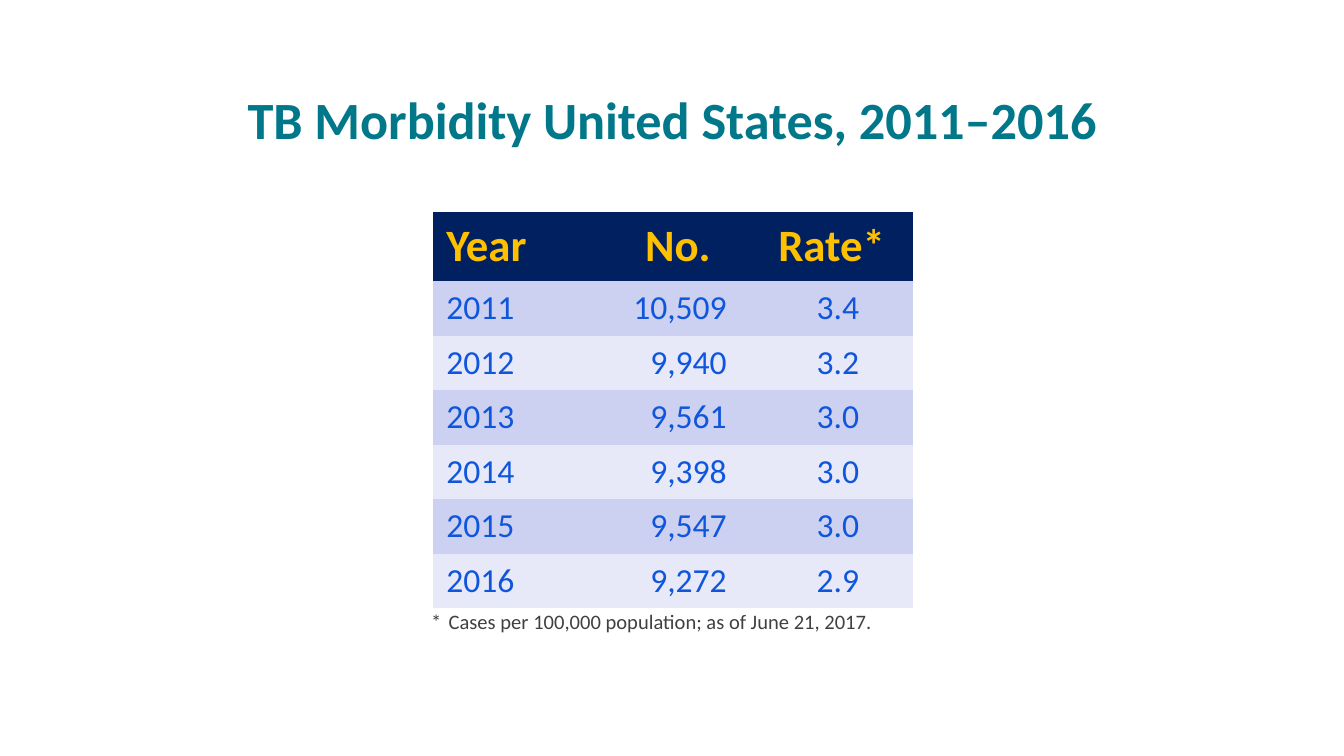
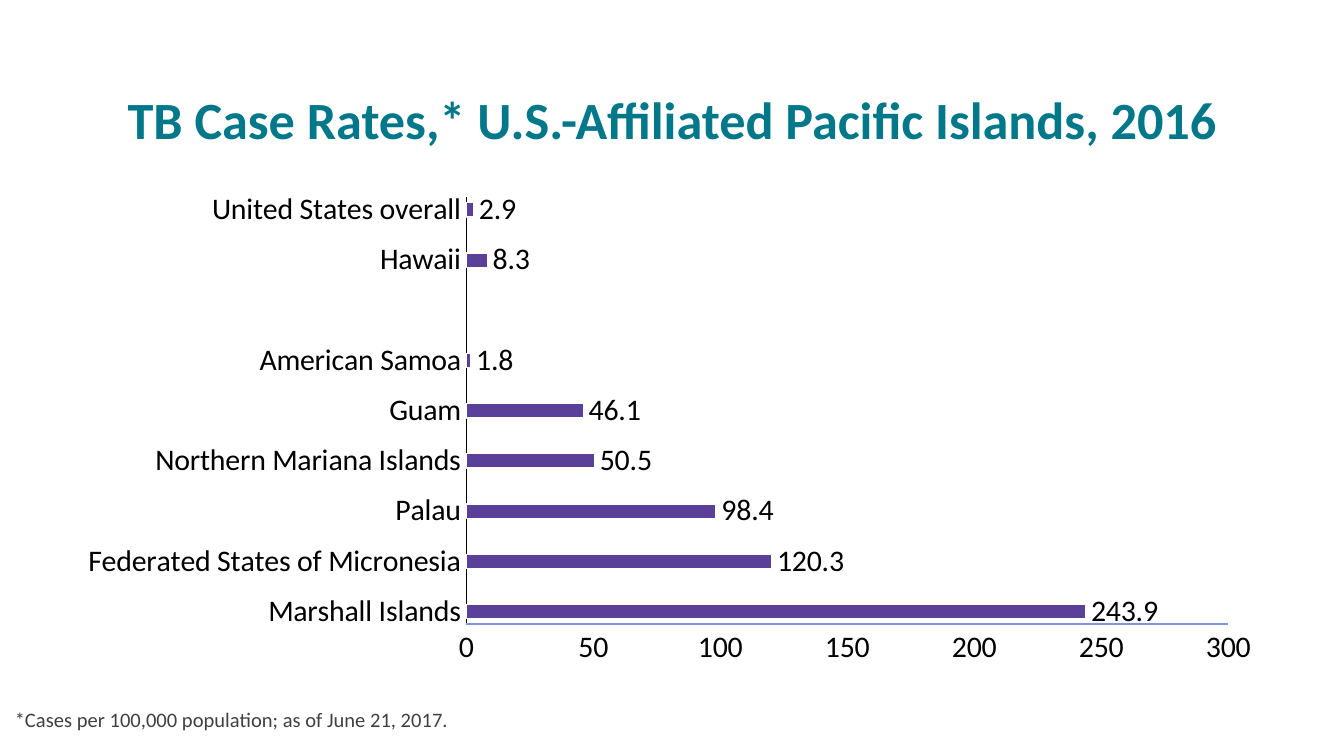
from collections import namedtuple
from dataclasses import dataclass

from lxml import etree
from pptx import Presentation
from pptx import util as u
from pptx.chart.data import CategoryChartData
from pptx.dml.color import RGBColor
from pptx.enum import chart as ch
from pptx.enum import text as t
from pptx.oxml.ns import qn

Box = namedtuple("Box", "left top width height")
Align = t.PP_ALIGN


@dataclass(frozen=True)
class Theme:
    font: str = "Calibri"
    title: str = "00788A"
    note: str = "404040"
    header_fill: str = "002060"
    header_text: str = "FFC000"
    bands: tuple = ("CCD1F2", "E7E9F9")
    figures: str = "0F56DC"
    bar: str = "5A4099"
    bar_edge: str = "FFFFFF"
    axis: str = "000000"
    baseline: str = "8094E0"
    title_size: int = 28
    title_leading: int = 30
    header_size: int = 24
    figure_size: int = 18
    chart_size: int = 16
    note_size: int = 11


THEME = Theme()
NO_TABLE_STYLE = "{2D5ABB26-0587-4C30-8999-92F81FD0307C}"
TITLE_BOX = Box(1.27, 0.58, 22.86, 2.39)
CASES_NOTE = "Cases per 100,000 population; as of June 21, 2017."

MORBIDITY = [
    ("2011", "10,509", "3.4"),
    ("2012", "9,940", "3.2"),
    ("2013", "9,561", "3.0"),
    ("2014", "9,398", "3.0"),
    ("2015", "9,547", "3.0"),
    ("2016", "9,272", "2.9"),
]
PACIFIC_RATES = [
    ("Marshall Islands", 243.9),
    ("Federated States of Micronesia", 120.3),
    ("Palau", 98.4),
    ("Northern Mariana Islands", 50.5),
    ("Guam", 46.1),
    ("American Samoa", 1.8),
    ("", None),
    ("Hawaii", 8.3),
    ("United States overall", 2.9),
]


def rgb(colour):
    return RGBColor.from_string(colour)


def place(box):
    return [u.Cm(length) for length in box]


def style_font(font, size, colour, bold=False):
    font.name, font.size, font.bold = THEME.font, u.Pt(size), bold
    font.color.rgb = rgb(colour)


def write(frame, text, *, size, colour, bold=False, align=Align.LEFT,
          anchor=None, leading=None, hanging=0):
    """Fill a text frame with one formatted paragraph; hanging is in cm."""
    frame.word_wrap = True
    if anchor is not None:
        frame.vertical_anchor = anchor
    paragraph = frame.paragraphs[0]
    paragraph.text = text
    paragraph.alignment = align
    if leading:
        paragraph.line_spacing = u.Pt(leading)
    if hanging:
        properties = paragraph._p.get_or_add_pPr()
        properties.set("marL", str(u.Cm(hanging)))
        properties.set("indent", str(-u.Cm(hanging)))
    style_font(paragraph.runs[0].font, size, colour, bold)


def add_titled_slide(deck, title):
    slide = deck.slides.add_slide(deck.slide_layouts[5])
    heading = slide.shapes.title
    heading.left, heading.top, heading.width, heading.height = place(TITLE_BOX)
    write(heading.text_frame, title, size=THEME.title_size, colour=THEME.title,
          bold=True, align=Align.CENTER, anchor=t.MSO_ANCHOR.BOTTOM,
          leading=THEME.title_leading)
    return slide


def add_note(slide, box, text, hanging=0):
    note = slide.shapes.add_textbox(*place(box))
    write(note.text_frame, text, size=THEME.note_size, colour=THEME.note,
          hanging=hanging)


def add_morbidity_table(slide, box):
    header_height = 1.3
    row_height = (box.height - header_height) / len(MORBIDITY)
    rows = [("Year", "No.", "Rate*"), *MORBIDITY]
    table = slide.shapes.add_table(len(rows), 3, *place(box)).table
    table._tbl.tblPr.find(qn("a:tableStyleId")).text = NO_TABLE_STYLE
    for column, share in zip(table.columns, (0.38, 0.26, 0.36)):
        column.width = u.Cm(box.width * share)

    for r, values in enumerate(rows):
        is_header = r == 0
        table.rows[r].height = u.Cm(header_height if is_header else row_height)
        fill = THEME.header_fill if is_header else THEME.bands[(r - 1) % 2]
        aligns = (Align.LEFT, Align.CENTER if is_header else Align.RIGHT,
                  Align.CENTER)
        for c, value in enumerate(values):
            cell = table.cell(r, c)
            cell.fill.solid()
            cell.fill.fore_color.rgb = rgb(fill)
            if c == 2:
                cell.margin_left = u.Cm(0.44 if is_header else 0.68)
            write(cell.text_frame, value, align=aligns[c], bold=is_header,
                  size=THEME.header_size if is_header else THEME.figure_size,
                  colour=THEME.header_text if is_header else THEME.figures)


def fix_plot_area(chart, x, y, w, h):
    """Pin the inner plot area, in fractions of the chart."""
    plot_area = chart._chartSpace.chart.plotArea
    for old in plot_area.findall(qn("c:layout")):
        plot_area.remove(old)
    layout = etree.Element(qn("c:layout"))
    manual = etree.SubElement(layout, qn("c:manualLayout"))
    for tag, value in (("layoutTarget", "inner"), ("xMode", "edge"),
                       ("yMode", "edge"), ("x", x), ("y", y), ("w", w), ("h", h)):
        etree.SubElement(manual, qn(f"c:{tag}")).set("val", str(value))
    plot_area.insert(0, layout)


def style_axis(axis, colour, width):
    axis.has_major_gridlines = False
    axis.major_tick_mark = axis.minor_tick_mark = ch.XL_TICK_MARK.NONE
    axis.format.line.color.rgb = rgb(colour)
    axis.format.line.width = u.Pt(width)
    style_font(axis.tick_labels.font, THEME.chart_size, THEME.axis)


def add_rates_chart(slide, box):
    rates = CategoryChartData(number_format="0.0")
    spaced = []
    for entry in PACIFIC_RATES:
        spaced += [entry, ("", None)]
    spaced.pop()
    rates.categories = [island for island, _ in spaced]
    rates.add_series("Series 1", [rate for _, rate in spaced])
    chart = slide.shapes.add_chart(ch.XL_CHART_TYPE.BAR_CLUSTERED,
                                   *place(box), rates).chart
    chart.has_legend = chart.has_title = False
    style_font(chart.font, THEME.figure_size, THEME.figures)
    fix_plot_area(chart, 0.33, 0.03, 0.63, 0.87)

    islands, scale = chart.category_axis, chart.value_axis
    style_axis(islands, THEME.axis, 0.75)
    style_axis(scale, THEME.baseline, 0.75)
    skip = etree.Element(qn("c:tickLblSkip"))
    skip.set("val", "1")
    islands._element.find(qn("c:noMultiLvlLbl")).addprevious(skip)
    scale.minimum_scale, scale.maximum_scale, scale.major_unit = 0, 300, 50
    scale.tick_labels.number_format = "General"
    scale.tick_labels.number_format_is_linked = False

    plot = chart.plots[0]
    plot.gap_width, plot.vary_by_categories = 75, False
    bars = plot.series[0].format
    bars.fill.solid()
    bars.fill.fore_color.rgb = rgb(THEME.bar)
    bars.line.color.rgb = rgb(THEME.bar_edge)
    bars.line.width = u.Pt(0.75)
    plot.has_data_labels = True
    labels = plot.data_labels
    labels.show_value = True
    labels.number_format, labels.number_format_is_linked = "0.0", False
    labels.position = ch.XL_LABEL_POSITION.OUTSIDE_END
    style_font(labels.font, THEME.chart_size, THEME.axis)


def build_morbidity_slide(deck):
    slide = add_titled_slide(deck, "TB Morbidity United States, 2011–2016")
    add_morbidity_table(slide, Box(8.18, 4.01, 9.08, 7.48))
    add_note(slide, Box(7.9, 11.38, 11.07, 0.94), f"*\t{CASES_NOTE}", hanging=0.33)


def build_pacific_slide(deck):
    slide = add_titled_slide(
        deck, "TB Case Rates,* U.S.-Affiliated Pacific Islands, 2016")
    add_note(slide, Box(0.03, 13.23, 9.53, 0.79), f"*{CASES_NOTE}")
    add_rates_chart(slide, Box(1.27, 3.45, 22.86, 9.27))


def main():
    deck = Presentation()
    deck.slide_width, deck.slide_height = u.Cm(25.4), u.Cm(14.28)
    build_morbidity_slide(deck)
    build_pacific_slide(deck)
    deck.save("out.pptx")


if __name__ == "__main__":
    main()
